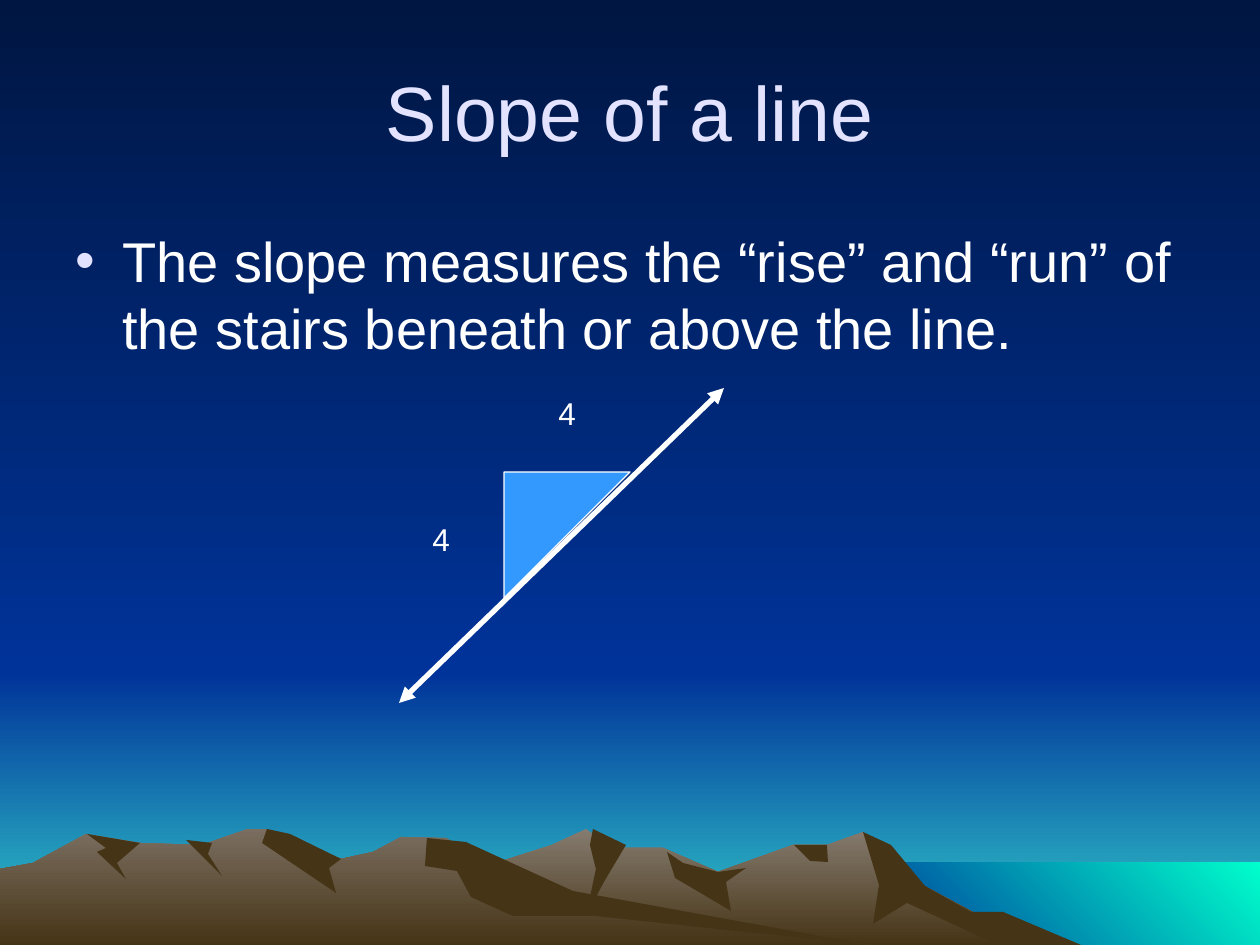
from lxml import etree
from pptx import Presentation
from pptx.dml.color import RGBColor
from pptx.enum.shapes import MSO_CONNECTOR, MSO_SHAPE
from pptx.enum.text import MSO_ANCHOR, PP_ALIGN
from pptx.oxml.ns import qn
from pptx.util import Emu, Pt

PX = 914400 / 126
W, H = 1260, 945
RECT, TRIANGLE = MSO_SHAPE.RECTANGLE, MSO_SHAPE.RIGHT_TRIANGLE
STRAIGHT = MSO_CONNECTOR.STRAIGHT
TOP, MIDDLE = MSO_ANCHOR.TOP, MSO_ANCHOR.MIDDLE
LEFT, CENTER = PP_ALIGN.LEFT, PP_ALIGN.CENTER
DOWN, UP_RIGHT = 270, 45
COLORS = {
    "night": "001642", "sky": "003399", "horizon": "33CCCC", "sea": "00FFCC",
    "far_rock": "857B6F", "near_rock": "7A6E60", "shade": "463416",
    "title": "E3E3FF", "white": "FFFFFF", "triangle": "3399FF",
}
RGB = {name: RGBColor.from_string(value) for name, value in COLORS.items()}


def paint(s, colors, angle=DOWN):
    s.shadow.inherit = False
    s.line.fill.background()
    if len(colors) == 1:
        s.fill.solid()
        s.fill.fore_color.rgb = RGB[colors[0]]
        return
    s.fill.gradient()
    s.fill.gradient_angle = angle
    for stop, color in zip(s.fill.gradient_stops, colors):
        stop.color.rgb = RGB[color]


def add_text(box, text, size, color, anchor=TOP, align=LEFT):
    s = sp.add_textbox(*[Emu(round(v * PX)) for v in box])
    tf = s.text_frame
    tf.word_wrap = True
    tf.vertical_anchor = anchor
    p = tf.paragraphs[0]
    p.alignment = align
    r = p.add_run()
    r.text = text
    r.font.name = "Arial"
    r.font.size = Pt(size)
    r.font.color.rgb = RGB[color]
    return p


prs = Presentation()
prs.slide_width, prs.slide_height = Emu(round(W * PX)), Emu(round(H * PX))
s = prs.slides.add_slide(prs.slide_layouts[6])
sp = s.shapes

bands = [
    ((0, 672, W, 273), ("sky", "horizon"), DOWN),
    ((0, 0, W, 672), ("night", "sky"), DOWN),
    ((861, 862, 399, 83), ("sky", "sea"), UP_RIGHT),
]
for box, colors, angle in bands:
    paint(sp.add_shape(RECT, *[Emu(round(v * PX)) for v in box]), colors, angle)

shade = ("shade",)
mountains = [
    (("far_rock", "shade"), [
        (325, H), (496, 863), (552, 845), (586, 829), (612, 848), (663, 848),
        (718, 872), (793, 845), (827, 845), (863, 832), (911, 879), (1034, H)]),
    (shade, [
        (863, 832), (891, 845), (925, 886), (971, 912), (1003, 912), (1081, H),
        (998, H), (907, 903), (873, 924), (879, 885)]),
    (shade, [
        (593, 829), (626, 845), (604, 882), (586, 916), (596, 869), (590, 845)]),
    (shade, [
        (667, 852), (683, 863), (718, 872), (746, 868), (726, 882), (731, 911),
        (675, 878)]),
    (shade, [(794, 845), (827, 845), (828, 862), (810, 861)]),
    (("near_rock", "shade"), [
        (0, H), (0, 869), (33, 863), (86, 834), (140, 843), (202, 845),
        (247, 829), (267, 829), (341, 859), (373, 852), (401, 837), (446, 838),
        (544, 897), (869, H)]),
    (shade, [
        (267, 829), (290, 834), (341, 859), (329, 868), (336, 893), (262, 843)]),
    (shade, [
        (427, 838), (466, 842), (573, 891), (869, H), (595, 916), (513, 916),
        (471, 897), (457, 871), (425, 866)]),
    (shade, [(186, 840), (212, 843), (208, 854), (222, 876)]),
    (shade, [
        (87, 834), (140, 843), (117, 863), (126, 879), (97, 852), (106, 848)]),
]
for colors, points in mountains:
    outline = sp.build_freeform(*points[0], scale=PX)
    outline.add_line_segments(points[1:], close=True)
    paint(outline.convert_to_shape(), colors)

add_text((63, 32, 1134, 157), "Slope of a line", 44, "title", MIDDLE, CENTER)
p = add_text((63, 220, 1134, 620),
             "The slope measures the “rise” and “run” of the stairs beneath or above the line.",
             32, "white")
pPr = p._p.get_or_add_pPr()
pPr.set("marL", str(round(47 * PX)))
pPr.set("indent", str(round(-47 * PX)))
color = etree.SubElement(pPr, qn("a:buClr"))
etree.SubElement(color, qn("a:srgbClr"), val=COLORS["title"])
etree.SubElement(pPr, qn("a:buFont"), typeface="Arial")
etree.SubElement(pPr, qn("a:buChar"), char="•")

slope = sp.add_connector(STRAIGHT, *[Emu(round(v * PX)) for v in (399, 703, 724, 388)])
slope.line.color.rgb = RGB["white"]
slope.line.width = Pt(3)
ln = slope._element.spPr.find(qn("a:ln"))
for end in ("a:headEnd", "a:tailEnd"):
    etree.SubElement(ln, qn(end), type="triangle")
etree.SubElement(slope._element.spPr, qn("a:effectLst"))

stair = sp.add_shape(TRIANGLE, *[Emu(round(v * PX)) for v in (504, 472, 126, 126)])
paint(stair, ("triangle",))
stair.rotation = 90
stair.line.color.rgb = RGB["white"]
stair.line.width = Pt(0.75)

for x, y in ((420, 514), (546, 388)):
    add_text((x, y, 42, 50), "4", 18, "white")

prs.save("out.pptx")
